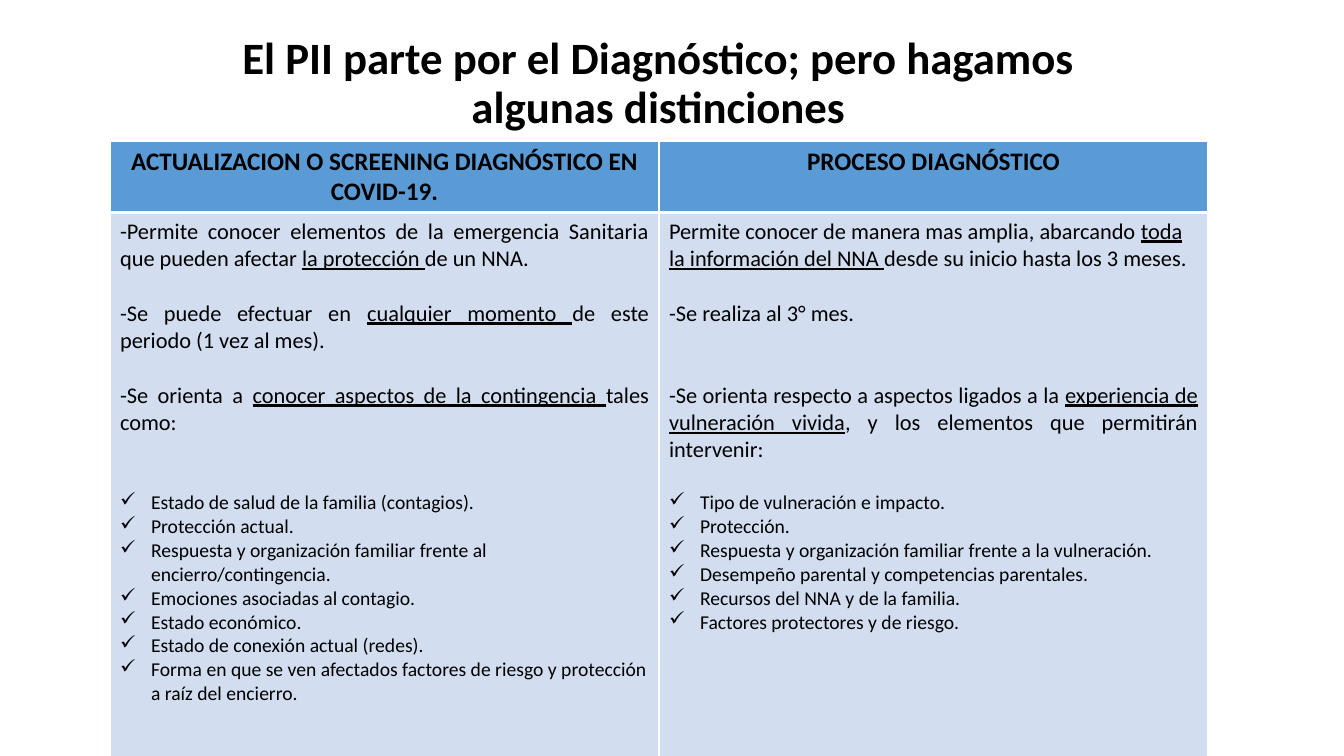
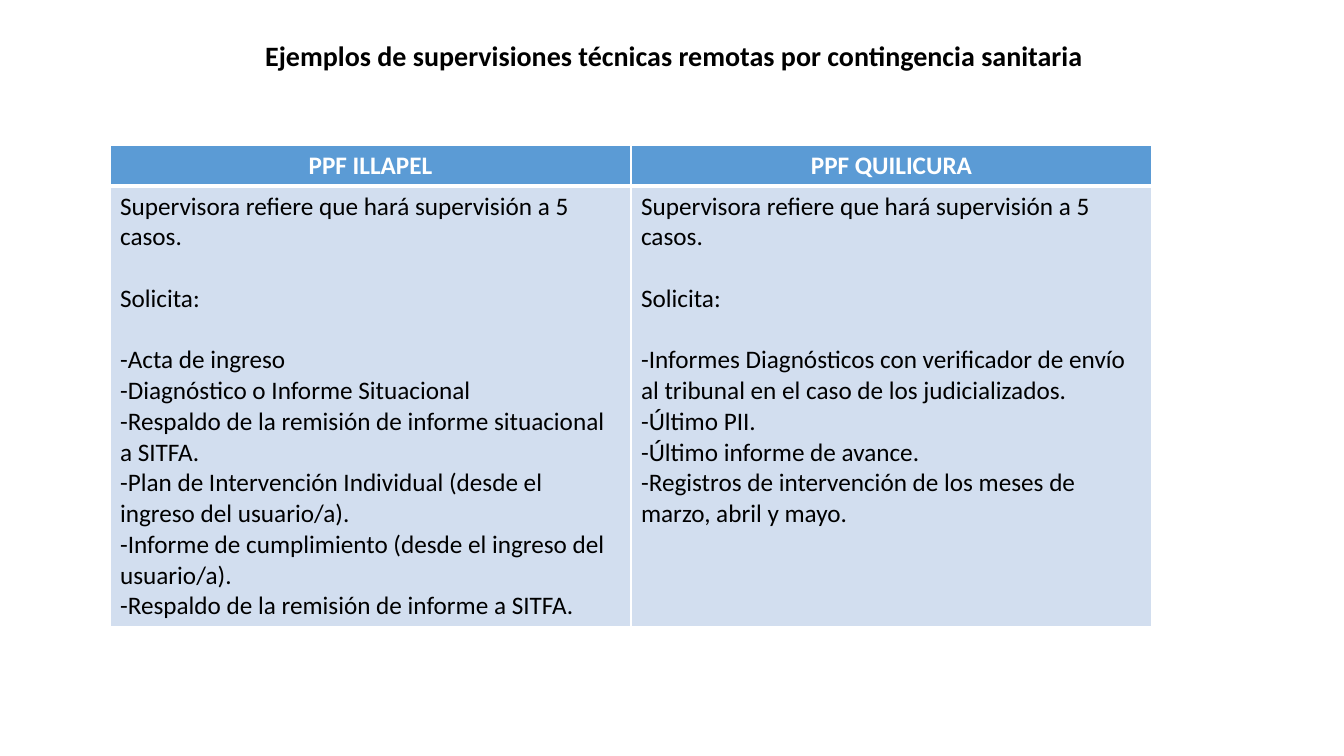
"""Build two slides that compare diagnostic processes and remote supervisions."""
from dataclasses import dataclass

from lxml.etree import SubElement
from pptx import Presentation
from pptx.dml.color import RGBColor
from pptx.enum.text import MSO_ANCHOR as Anchor, MSO_AUTO_SIZE as AutoSize, PP_ALIGN as Align
from pptx.oxml import parse_xml
from pptx.oxml.ns import nsdecls, qn
from pptx.util import Emu, Pt

SLIDE_WIDTH, SLIDE_HEIGHT = 1344, 756
EMU_PER_PX = 12192000 / SLIDE_WIDTH
FONT = "Calibri"
LINE_RATIO = 1.22
BULLET_INDENT = 31
COLORS = {"ink": "000000", "white": "FFFFFF", "header": "5B9BD5", "body": "D2DEEF"}


@dataclass(frozen=True)
class Item:
    """A paragraph; underscores enclose underlined words, gap counts lines above."""
    text: str
    size: int = 18
    gap: int = 0
    align: Align = Align.LEFT
    bullet: bool = False


@dataclass(frozen=True)
class Column:
    """A table column with its heading and paragraphs."""
    heading: str
    items: list[Item]


@dataclass(frozen=True)
class Comparison:
    """A slide with a title above a two-row table."""
    title: str
    title_box: tuple[int, int, int, int]
    title_size: int
    title_spacing: float
    table_left: int
    table_top: int
    column_width: int
    row_heights: tuple[int, int]
    heading_color: str
    columns: list[Column]


def checks(texts: list[str], gap: int) -> list[Item]:
    """Return check-marked items, the first one set apart by gap lines."""
    return [Item(text, 14, 0 if index else gap, bullet=True) for index, text in enumerate(texts)]


def plain(texts: list[str]) -> list[Item]:
    """Return the request items, the first one set apart by a line."""
    opening = [Item("Supervisora refiere que hará supervisión a 5 casos."), Item("Solicita:", gap=1)]
    return opening + [Item(text, gap=0 if index else 1) for index, text in enumerate(texts)]


COMPARISONS = [
    Comparison(
        "El PII parte por el Diagnóstico; pero hagamos algunas distinciones",
        (230, 31, 857, 88), 32, 0.9, 110, 141, 549, (71, 544), "ink",
        [
            Column("ACTUALIZACION O SCREENING DIAGNÓSTICO EN COVID-19.", [
                Item("-Permite conocer elementos de la emergencia Sanitaria que pueden afectar "
                     "_la protección _de un NNA.", 16, align=Align.JUSTIFY),
                Item("-Se puede efectuar en _cualquier momento _de este periodo (1 vez al mes).",
                     16, 1, Align.JUSTIFY),
                Item("-Se orienta a _conocer aspectos de la contingencia _tales como:",
                     16, 1, Align.JUSTIFY),
                *checks([
                    "Estado de salud de la familia (contagios).",
                    "Protección actual.",
                    "Respuesta y organización familiar frente al encierro/contingencia.",
                    "Emociones asociadas al contagio.",
                    "Estado económico.",
                    "Estado de conexión actual (redes).",
                    "Forma en que se ven afectados factores de riesgo y protección "
                    "a raíz del encierro.",
                ], gap=2),
            ]),
            Column("PROCESO DIAGNÓSTICO", [
                Item("Permite conocer de manera mas amplia, abarcando "
                     "_toda la información del NNA _desde su inicio hasta los 3 meses.", 16),
                Item("-Se realiza al 3° mes.", 16, 1),
                Item("-Se orienta respecto a aspectos ligados a la _experiencia de vulneración "
                     "vivida_, y los elementos que permitirán intervenir:", 16, 2, Align.JUSTIFY),
                *checks([
                    "Tipo de vulneración e impacto.",
                    "Protección.",
                    "Respuesta y organización familiar frente a la vulneración.",
                    "Desempeño parental y competencias parentales.",
                    "Recursos del NNA y de la familia.",
                    "Factores protectores y de riesgo.",
                ], gap=1),
            ]),
        ],
    ),
    Comparison(
        "Ejemplos de supervisiones técnicas remotas por contingencia sanitaria",
        (235, 33, 878, 44), 20, 1.0, 110, 145, 521, (41, 432), "white",
        [
            Column("PPF ILLAPEL", plain([
                "-Acta de ingreso",
                "-Diagnóstico o Informe Situacional",
                "-Respaldo de la remisión de informe situacional a SITFA.",
                "-Plan de Intervención Individual (desde el ingreso del usuario/a).",
                "-Informe de cumplimiento (desde el ingreso del usuario/a).",
                "-Respaldo de la remisión de informe a SITFA.",
            ])),
            Column("PPF QUILICURA", plain([
                "-Informes Diagnósticos con verificador de envío al tribunal "
                "en el caso de los judicializados.",
                "-Último PII.",
                "-Último informe de avance.",
                "-Registros de intervención de los meses de marzo, abril y mayo.",
            ])),
        ],
    ),
]


def px(length: int) -> Emu:
    """Convert pixels to EMU."""
    return Emu(round(length * EMU_PER_PX))


def write_text(paragraph, text: str, *, size: int, color: str = "ink", bold: bool = False,
               align: Align = Align.LEFT, space_before: float = 0, spacing: float = 1.0,
               bullet: bool = False) -> None:
    """Write formatted text, underlining the parts between underscores."""
    if bullet:
        properties = paragraph._p.get_or_add_pPr()
        properties.set("marL", str(px(BULLET_INDENT)))
        properties.set("indent", str(-px(BULLET_INDENT)))
        SubElement(properties, qn("a:buChar")).set("char", "✓")
    paragraph.alignment = align
    paragraph.space_before = Pt(space_before)
    paragraph.line_spacing = spacing
    for index, part in enumerate(text.split("_")):
        run = paragraph.add_run()
        run.text = part
        run.font.name = FONT
        run.font.size = Pt(size)
        run.font.bold = bold
        run.font.underline = index % 2 == 1
        run.font.color.rgb = RGBColor.from_string(COLORS[color])


def style_cell(cell, fill: str, thick_edge: str) -> None:
    """Fill a cell and give it white borders, one of them thick."""
    cell.fill.solid()
    cell.fill.fore_color.rgb = RGBColor.from_string(COLORS[fill])
    properties = cell._tc.get_or_add_tcPr()
    for index, edge in enumerate(("lnL", "lnR", "lnT", "lnB")):
        width = Pt(3 if edge == thick_edge else 1)
        properties.insert(index, parse_xml(
            f'<a:{edge} {nsdecls("a")} w="{width}"><a:solidFill>'
            f'<a:srgbClr val="{COLORS["white"]}"/></a:solidFill></a:{edge}>'))


def add_title(slide, comparison: Comparison) -> None:
    """Place and write the slide title."""
    title = slide.shapes.title
    title.left, title.top, title.width, title.height = map(px, comparison.title_box)
    frame = title.text_frame
    frame.word_wrap = True
    frame.auto_size = AutoSize.NONE
    frame.vertical_anchor = Anchor.TOP
    write_text(frame.paragraphs[0], comparison.title, size=comparison.title_size, bold=True,
               align=Align.CENTER, spacing=comparison.title_spacing)


def add_comparison_table(slide, comparison: Comparison) -> None:
    """Draw the table with a heading row and a content row."""
    columns = comparison.columns
    table = slide.shapes.add_table(
        2, len(columns), px(comparison.table_left), px(comparison.table_top),
        px(comparison.column_width * len(columns)), px(sum(comparison.row_heights))).table
    for row, height in zip(table.rows, comparison.row_heights):
        row.height = px(height)
    for index, column in enumerate(columns):
        table.columns[index].width = px(comparison.column_width)
        heading, content = table.cell(0, index), table.cell(1, index)
        style_cell(heading, "header", "lnB")
        style_cell(content, "body", "lnT")
        write_text(heading.text_frame.paragraphs[0], column.heading, size=18, bold=True,
                   color=comparison.heading_color, align=Align.CENTER)
        frame = content.text_frame
        for position, item in enumerate(column.items):
            paragraph = frame.add_paragraph() if position else frame.paragraphs[0]
            gap_size = max(item.size, 16)
            write_text(paragraph, item.text, size=item.size, align=item.align,
                       space_before=round(item.gap * gap_size * LINE_RATIO, 1),
                       bullet=item.bullet)


def main() -> None:
    """Build and save the presentation."""
    deck = Presentation()
    deck.slide_width, deck.slide_height = px(SLIDE_WIDTH), px(SLIDE_HEIGHT)
    for comparison in COMPARISONS:
        slide = deck.slides.add_slide(deck.slide_layouts.get_by_name("Title Only"))
        add_title(slide, comparison)
        add_comparison_table(slide, comparison)
    deck.save("out.pptx")


if __name__ == "__main__":
    main()
